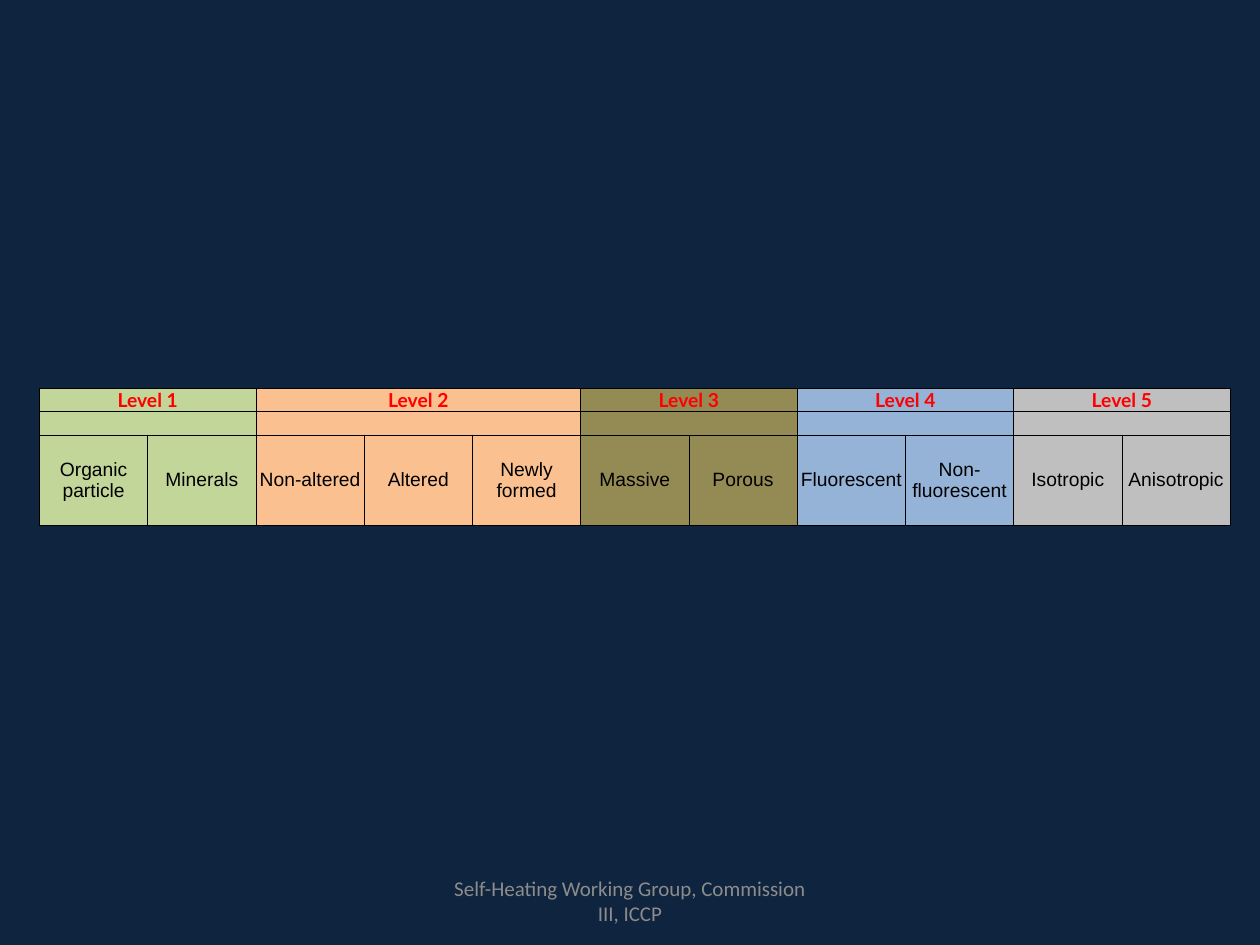
"""Build a slide with a five-level classification table and a footer."""
import pptx
import pptx.dml.color
import pptx.enum.text
import pptx.oxml
import pptx.oxml.ns
import pptx.util
from lxml import etree

Pt = pptx.util.Pt
ANCHOR = pptx.enum.text.MSO_ANCHOR

LEVELS = [
    ("Level 1", "C2D69A", ["Organic particle", "Minerals"]),
    ("Level 2", "FAC090", ["Non-altered", "Altered", "Newly formed"]),
    ("Level 3", "948B54", ["Massive", "Porous"]),
    ("Level 4", "95B3D7", ["Fluorescent", "Non-fluorescent"]),
    ("Level 5", "BFBFBF", ["Isotropic", "Anisotropic"]),
]
FOOTER = "Self-Heating Working Group, Commission III, ICCP"
BACKGROUND = "0F243E"
TABLE_LEFT, TABLE_TOP, COLUMN_WIDTH = 22.6, 221.8, 61.88
ROW_HEIGHTS = [13.4, 13.4, 51.5]
BORDER_WIDTH = 0.5


def paint(fill, color):
    fill.solid()
    fill.fore_color.rgb = pptx.dml.color.RGBColor.from_string(color)


def write(frame, text, font="Arial", size=11, color="000000", bold=False, anchor=ANCHOR.MIDDLE):
    frame.word_wrap = True
    frame.vertical_anchor = anchor
    para = frame.paragraphs[0]
    para.alignment = pptx.enum.text.PP_ALIGN.CENTER
    if not text:
        end = etree.SubElement(para._p, pptx.oxml.ns.qn("a:endParaRPr"))
        end.set("sz", str(size * 100))
        return
    span = para.add_run()
    span.text = text
    span.font.name = font
    span.font.size = Pt(size)
    span.font.bold = bold
    span.font.color.rgb = pptx.dml.color.RGBColor.from_string(color)


def add_borders(cell):
    properties = cell._tc.get_or_add_tcPr()
    for position, side in enumerate(["lnL", "lnR", "lnT", "lnB"]):
        line = pptx.oxml.parse_xml(
            f'<a:{side} {pptx.oxml.ns.nsdecls("a")} w="{Pt(BORDER_WIDTH)}">'
            f'<a:solidFill><a:srgbClr val="000000"/></a:solidFill></a:{side}>'
        )
        properties.insert(position, line)


def add_level_table(page):
    count = sum(len(classes) for _, _, classes in LEVELS)
    table = page.shapes.add_table(
        len(ROW_HEIGHTS), count, Pt(TABLE_LEFT), Pt(TABLE_TOP),
        Pt(count * COLUMN_WIDTH), Pt(sum(ROW_HEIGHTS)),
    ).table
    table.first_row = table.horz_banding = False
    for column in table.columns:
        column.width = Pt(COLUMN_WIDTH)
    for row, height in zip(table.rows, ROW_HEIGHTS):
        row.height = Pt(height)

    start = 0
    for level, color, classes in LEVELS:
        last = start + len(classes) - 1
        for row in range(len(ROW_HEIGHTS)):
            for column in range(start, last + 1):
                cell = table.cell(row, column)
                cell.margin_left = cell.margin_right = 0
                cell.margin_top = cell.margin_bottom = 0
                paint(cell.fill, color)
                add_borders(cell)
        for row in (0, 1):
            table.cell(row, start).merge(table.cell(row, last))
        heading = table.cell(0, start)
        write(heading.text_frame, level, font="Lato", color="FF0000", bold=True)
        heading.vertical_anchor = ANCHOR.BOTTOM
        for offset, name in enumerate(classes):
            cell = table.cell(2, start + offset)
            write(cell.text_frame, name)
            cell.vertical_anchor = ANCHOR.MIDDLE
            write(table.cell(1, start + offset).text_frame, "")
        start = last + 1


def main():
    deck = pptx.Presentation()
    deck.slide_width, deck.slide_height = Pt(720), Pt(540)
    page = deck.slides.add_slide(deck.slide_layouts[6])
    paint(page.background.fill, BACKGROUND)
    box = page.shapes.add_textbox(Pt(246), Pt(500.5), Pt(228), Pt(28.75))
    write(box.text_frame, FOOTER, font="Calibri", size=12, color="8C8C8C")
    add_level_table(page)
    deck.save("out.pptx")


if __name__ == "__main__":
    main()
